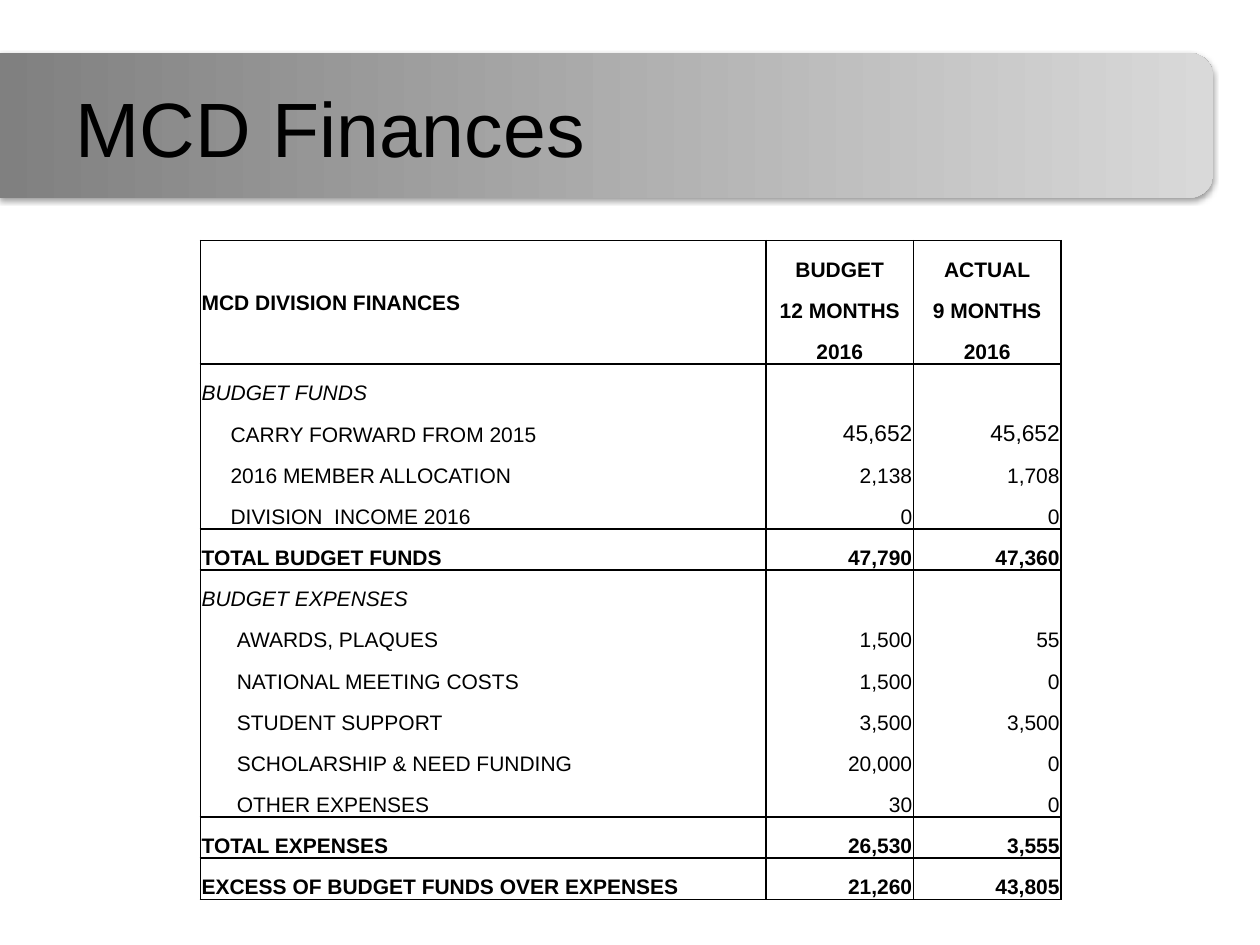
from lxml import etree
from pptx import Presentation
from pptx.dml.color import RGBColor
from pptx.enum.shapes import MSO_SHAPE as Shape
from pptx.enum.text import MSO_ANCHOR as Anchor, PP_ALIGN as Align
from pptx.oxml import parse_xml
from pptx.oxml.ns import nsdecls, qn
from pptx.util import Inches, Pt

FONT = "Arial"
COLORS = {"ink": "000000", "band_dark": "808080", "band_light": "D9D9D9"}
TITLE = "MCD Finances"
FINANCES = [
    ("header", "MCD DIVISION FINANCES", "BUDGET", "ACTUAL"),
    ("header", "", "12 MONTHS", "9 MONTHS"),
    ("header", "", "2016", "2016"),
    ("section", "BUDGET FUNDS", "", ""),
    ("fund", "CARRY FORWARD FROM 2015", "45,652", "45,652"),
    ("fund", "2016 MEMBER ALLOCATION", "2,138", "1,708"),
    ("fund", "DIVISION  INCOME 2016", "0", "0"),
    ("total", "TOTAL BUDGET FUNDS", "47,790", "47,360"),
    ("section", "BUDGET EXPENSES", "", ""),
    ("expense", "AWARDS, PLAQUES", "1,500", "55"),
    ("expense", "NATIONAL MEETING COSTS", "1,500", "0"),
    ("expense", "STUDENT SUPPORT", "3,500", "3,500"),
    ("expense", "SCHOLARSHIP & NEED FUNDING", "20,000", "0"),
    ("expense", "OTHER EXPENSES", "30", "0"),
    ("total", "TOTAL EXPENSES", "26,530", "3,555"),
    ("total", "EXCESS OF BUDGET FUNDS OVER EXPENSES", "21,260", "43,805"),
]
HEADER_ROWS = 3
COLUMN_WIDTHS = [4.49, 1.17, 1.17]
TABLE_HEIGHT = 5.23
INDENTS = {"fund": 0.23, "expense": 0.28}
LARGE_ROW = 4


def style_font(font, size, bold=False, italic=False):
    font.name, font.size, font.bold, font.italic = FONT, Pt(size), bold, italic
    font.color.rgb = RGBColor.from_string(COLORS["ink"])


def add_band(slide):
    band = slide.shapes.add_shape(
        Shape.ROUND_2_SAME_RECTANGLE,
        Inches(4.24), Inches(-3.82), Inches(1.15), Inches(9.63))
    band.rotation = 90
    band.line.fill.background()
    band.fill.gradient()
    band.fill.gradient_angle = 0
    for stop, key in zip(band.fill.gradient_stops, ("band_dark", "band_light")):
        stop.color.rgb = RGBColor.from_string(COLORS[key])
    properties = band._element.spPr
    properties.find(qn("a:gradFill")).set("rotWithShape", "0")
    properties.append(parse_xml(
        f'<a:effectLst {nsdecls("a")}><a:outerShdw blurRad="{Pt(3.1)}" '
        f'dist="{Pt(1.6)}" dir="5400000" rotWithShape="0">'
        f'<a:srgbClr val="{COLORS["ink"]}"><a:alpha val="38000"/></a:srgbClr>'
        '</a:outerShdw></a:effectLst>'))
    slide.shapes._spTree.insert(2, band._element)


def add_title(slide):
    title = slide.shapes.title
    title.left, title.top = Inches(0.5), Inches(0.42)
    title.width, title.height = Inches(9), Inches(1.17)
    frame = title.text_frame
    frame.text = TITLE
    frame.vertical_anchor = Anchor.MIDDLE
    frame.paragraphs[0].alignment = Align.LEFT
    style_font(frame.paragraphs[0].runs[0].font, 44)


def set_borders(cell, sides):
    properties = cell._tc.get_or_add_tcPr()
    for side in "LRTB":
        line = etree.SubElement(properties, qn(f"a:ln{side}"), w=str(Pt(1)))
        if side in sides:
            fill = etree.SubElement(line, qn("a:solidFill"))
            etree.SubElement(fill, qn("a:srgbClr"), val=COLORS["ink"])
        else:
            etree.SubElement(line, qn("a:noFill"))


def starts_block(row):
    if row in (0, len(FINANCES)):
        return True
    kind, previous = FINANCES[row][0], FINANCES[row - 1][0]
    return kind in ("section", "total") or previous == "total"


def add_finances(slide):
    table = slide.shapes.add_table(
        len(FINANCES), len(COLUMN_WIDTHS), Inches(1.59), Inches(1.91),
        Inches(sum(COLUMN_WIDTHS)), Inches(TABLE_HEIGHT)).table
    table.first_row = table.horz_banding = False
    for column, width in zip(table.columns, COLUMN_WIDTHS):
        column.width = Inches(width)
    for row, (kind, *texts) in enumerate(FINANCES):
        table.rows[row].height = Inches(TABLE_HEIGHT / len(FINANCES))
        sides = "LR" + "T" * starts_block(row) + "B" * starts_block(row + 1)
        for column, text in enumerate(texts):
            cell = table.cell(row, column)
            set_borders(cell, sides)
            cell.fill.background()
            cell.margin_left = cell.margin_right = cell.margin_top = Inches(0.01)
            cell.margin_bottom = 0
            cell.vertical_anchor = Anchor.BOTTOM
            paragraph = cell.text_frame.paragraphs[0]
            paragraph.text = text
            if column == 0:
                paragraph.alignment = Align.LEFT
                cell.margin_left = Inches(0.01 + INDENTS.get(kind, 0))
            else:
                paragraph.alignment = Align.CENTER if kind == "header" else Align.RIGHT
            size = 13 if row == LARGE_ROW and column else 12
            for run in paragraph.runs:
                style_font(run.font, size, kind in ("header", "total"), kind == "section")
    heading = table.cell(0, 0)
    heading.merge(table.cell(HEADER_ROWS - 1, 0))
    heading.vertical_anchor = Anchor.MIDDLE


def main():
    deck = Presentation()
    deck.slide_width, deck.slide_height = Inches(10), Inches(7.5)
    slide = deck.slides.add_slide(deck.slide_layouts[5])
    add_band(slide)
    add_title(slide)
    add_finances(slide)
    deck.save("out.pptx")


if __name__ == "__main__":
    main()
